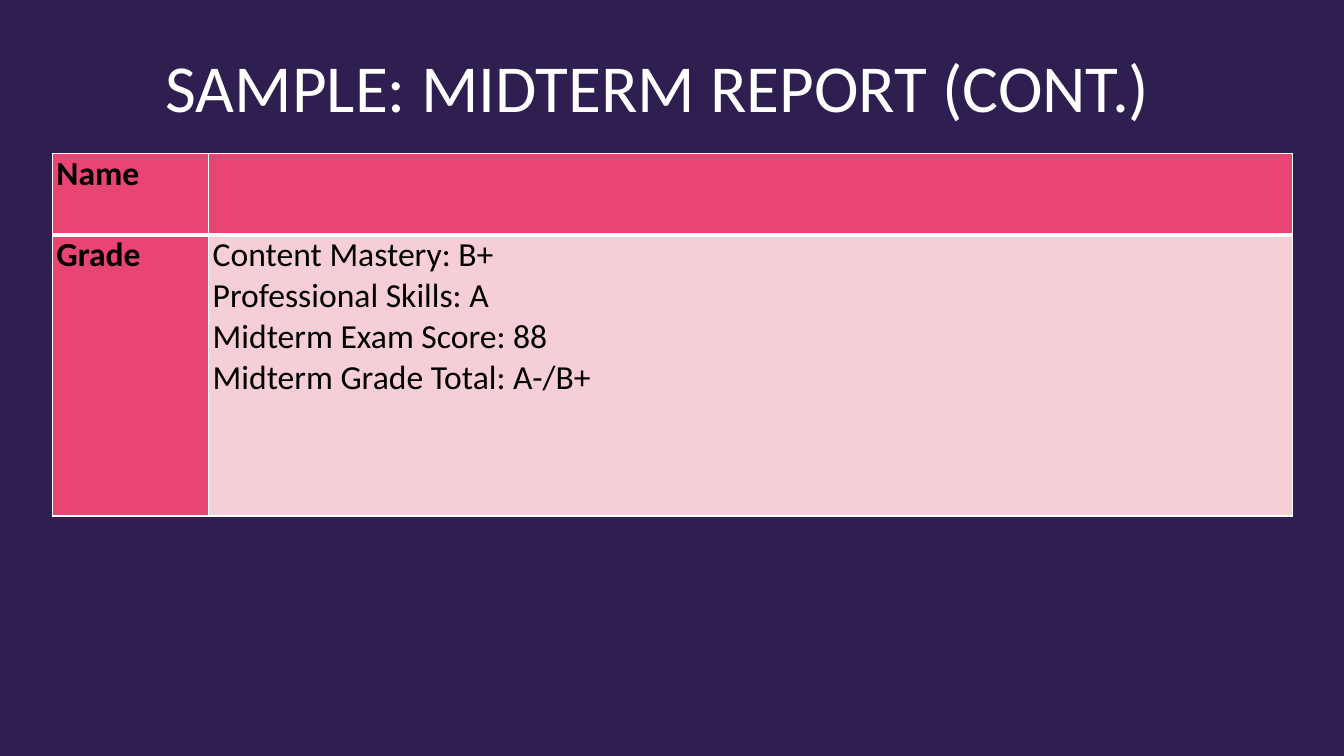
from pptx import Presentation
from pptx.dml.color import RGBColor
from pptx.enum.text import MSO_ANCHOR, MSO_AUTO_SIZE, PP_ALIGN
from pptx.oxml import parse_xml
from pptx.oxml.ns import nsdecls
from pptx.util import Inches, Pt

TITLE = "SAMPLE: MIDTERM REPORT (CONT.)"
REPORT = [
    ("Name", []),
    ("Grade", [
        "Content Mastery: B+",
        "Professional Skills: A",
        "Midterm Exam Score: 88",
        "Midterm Grade Total: A-/B+",
    ]),
]
COLUMN_WIDTHS = [1.55, 10.75]
ROW_HEIGHTS = [0.81, 2.79]
TABLE_LEFT, TABLE_TOP = 0.52, 1.52
FONT = "Calibri"

PURPLE = RGBColor(0x2F, 0x1F, 0x50)
PINK = RGBColor(0xE8, 0x45, 0x74)
PALE_PINK = RGBColor(0xF6, 0xCF, 0xD6)
WHITE = RGBColor(0xFF, 0xFF, 0xFF)
BLACK = RGBColor(0, 0, 0)


def write(frame, lines, size, color, bold=False, align=PP_ALIGN.LEFT):
    for index, line in enumerate(lines):
        paragraph = frame.paragraphs[0] if index == 0 else frame.add_paragraph()
        paragraph.alignment = align
        run = paragraph.add_run()
        run.text = line
        font = run.font
        font.name, font.size, font.bold = FONT, Pt(size), bold
        font.color.rgb = color


def draw_borders(cell, **widths):
    properties = cell._tc.get_or_add_tcPr()
    for side in "LRTB":
        properties.append(parse_xml(
            f'<a:ln{side} {nsdecls("a")} w="{Pt(widths.get(side, 1))}">'
            f'<a:solidFill><a:srgbClr val="{WHITE}"/></a:solidFill></a:ln{side}>'))


def add_title(slide):
    title = slide.shapes.title
    title.left, title.top = Inches(1.38), 0
    title.width, title.height = Inches(10.13), Inches(1.3)
    frame = title.text_frame
    frame.auto_size = MSO_AUTO_SIZE.NONE
    frame.vertical_anchor = MSO_ANCHOR.BOTTOM
    write(frame, [TITLE], 48, WHITE, align=PP_ALIGN.RIGHT)
    frame.paragraphs[0].space_after = Pt(6)


def add_report(slide):
    table = slide.shapes.add_table(
        len(REPORT), len(COLUMN_WIDTHS), Inches(TABLE_LEFT), Inches(TABLE_TOP),
        Inches(sum(COLUMN_WIDTHS)), Inches(sum(ROW_HEIGHTS))).table
    for column, width in zip(table.columns, COLUMN_WIDTHS):
        column.width = Inches(width)
    for row_index, (label, details) in enumerate(REPORT):
        is_header = row_index == 0
        table.rows[row_index].height = Inches(ROW_HEIGHTS[row_index])
        for column_index, lines in enumerate([[label], details]):
            is_label = column_index == 0
            cell = table.cell(row_index, column_index)
            cell.margin_left = cell.margin_right = Inches(0.04)
            cell.margin_top = cell.margin_bottom = 0
            draw_borders(cell, **{"B" if is_header else "T": 3})
            cell.fill.solid()
            cell.fill.fore_color.rgb = PINK if is_header or is_label else PALE_PINK
            write(cell.text_frame, lines, 24, BLACK, bold=is_label)


def main():
    presentation = Presentation()
    presentation.slide_width = Inches(13.33)
    presentation.slide_height = Inches(7.5)
    slide = presentation.slides.add_slide(presentation.slide_layouts[5])
    slide.background.fill.solid()
    slide.background.fill.fore_color.rgb = PURPLE
    add_title(slide)
    add_report(slide)
    presentation.save("out.pptx")


if __name__ == "__main__":
    main()
